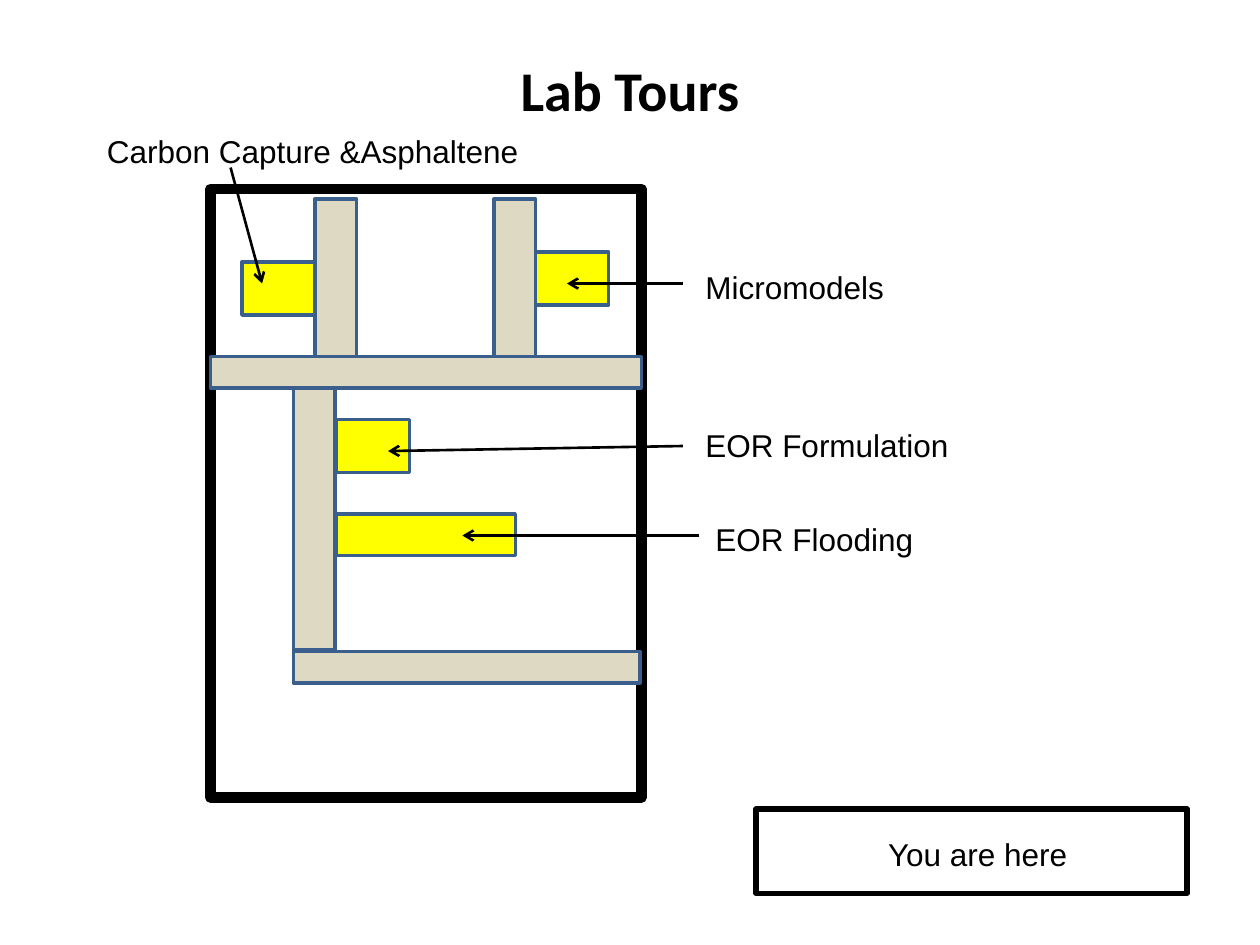
"""Builds the Lab Tours floor plan slide."""
from lxml import etree
from pptx import Presentation
from pptx import util as u
from pptx.dml.color import RGBColor
from pptx.enum import shapes, text
from pptx.oxml import ns

BLACK = RGBColor(0x00, 0x00, 0x00)
BENCH = RGBColor(0xDD, 0xD9, 0xC3)
STATION = RGBColor(0xFF, 0xFF, 0x00)
EDGE = RGBColor(0x3A, 0x5F, 0x8C)


class Plan:
    def __init__(self, slide, font="Arial", size=18):
        self.s = slide
        self.font = font
        self.size = size

    def box(self, at, fill=None, line=EDGE, width=2):
        sp = self.s.shapes.add_shape(shapes.MSO_SHAPE.RECTANGLE, *map(u.Inches, at))
        sp.shadow.inherit = False
        if fill is None:
            sp.fill.background()
        else:
            sp.fill.solid()
            sp.fill.fore_color.rgb = fill
        sp.line.color.rgb = line
        sp.line.width = u.Pt(width)

    def label(self, words, at, wrap=True):
        sp = self.s.shapes.add_textbox(*map(u.Inches, at))
        tf = sp.text_frame
        tf.word_wrap = wrap
        tf.auto_size = text.MSO_AUTO_SIZE.SHAPE_TO_FIT_TEXT
        self.run(tf.paragraphs[0], words, self.font, self.size)

    def title(self, words, at):
        sp = self.s.shapes.add_textbox(*map(u.Inches, at))
        tf = sp.text_frame
        tf.word_wrap = True
        tf.vertical_anchor = text.MSO_ANCHOR.MIDDLE
        p = tf.paragraphs[0]
        p.alignment = text.PP_ALIGN.CENTER
        self.run(p, words, "Calibri", 32, True)

    def run(self, p, words, font, size, bold=False):
        r = p.add_run()
        r.text = words
        r.font.name = font
        r.font.size = u.Pt(size)
        r.font.bold = bold
        r.font.color.rgb = BLACK

    def arrow(self, start, end):
        cx = self.s.shapes.add_connector(
            shapes.MSO_CONNECTOR.STRAIGHT, *map(u.Inches, start + end))
        cx.line.color.rgb = BLACK
        cx.line.width = u.Pt(1.5)
        ln = cx.line._get_or_add_ln()
        etree.SubElement(ln, ns.qn("a:tailEnd"), type="arrow")
        etree.SubElement(cx._element.spPr, ns.qn("a:effectLst"))


def main():
    prs = Presentation()
    prs.slide_width = u.Inches(10)
    prs.slide_height = u.Inches(7.5)
    plan = Plan(prs.slides.add_slide(prs.slide_layouts[6]))

    plan.title("Lab Tours", (0.5, 0.08, 9, 1.25))
    plan.box((1.67, 1.5, 3.42, 4.83), line=BLACK, width=6)
    plan.box((6, 6.42, 3.42, 0.67), line=BLACK, width=3)
    plan.label("You are here", (6.95, 6.58, 1.64, 0.4), wrap=False)

    benches = [
        (2.33, 5.17, 2.75, 0.25),
        (1.67, 2.83, 3.42, 0.25),
        (2.33, 3.08, 0.33, 2.08),
        (2.5, 1.58, 0.33, 1.25),
        (3.92, 1.58, 0.33, 1.25),
    ]
    for at in benches:
        plan.box(at, BENCH)

    stations = [
        (2.67, 4.08, 1.42, 0.33),
        (2.67, 3.33, 0.58, 0.42),
        (1.92, 2.08, 0.58, 0.42),
        (4.25, 2, 0.58, 0.42),
    ]
    for at in stations:
        plan.box(at, STATION)

    tours = [
        ("Carbon Capture &Asphaltene", (0.75, 1, 3.83, 0.4), (1.83, 1.33), (2.08, 2.25)),
        ("Micromodels", (5.5, 2.08, 1.75, 0.42), (5.42, 2.25), (4.5, 2.25)),
        ("EOR Formulation", (5.5, 3.33, 2.17, 0.42), (5.42, 3.54), (3.08, 3.58)),
        ("EOR Flooding", (5.58, 4.08, 1.83, 0.4), (5.55, 4.25), (3.67, 4.25)),
    ]
    for words, at, start, end in tours:
        plan.label(words, at)
        plan.arrow(start, end)

    prs.save("out.pptx")


if __name__ == "__main__":
    main()
